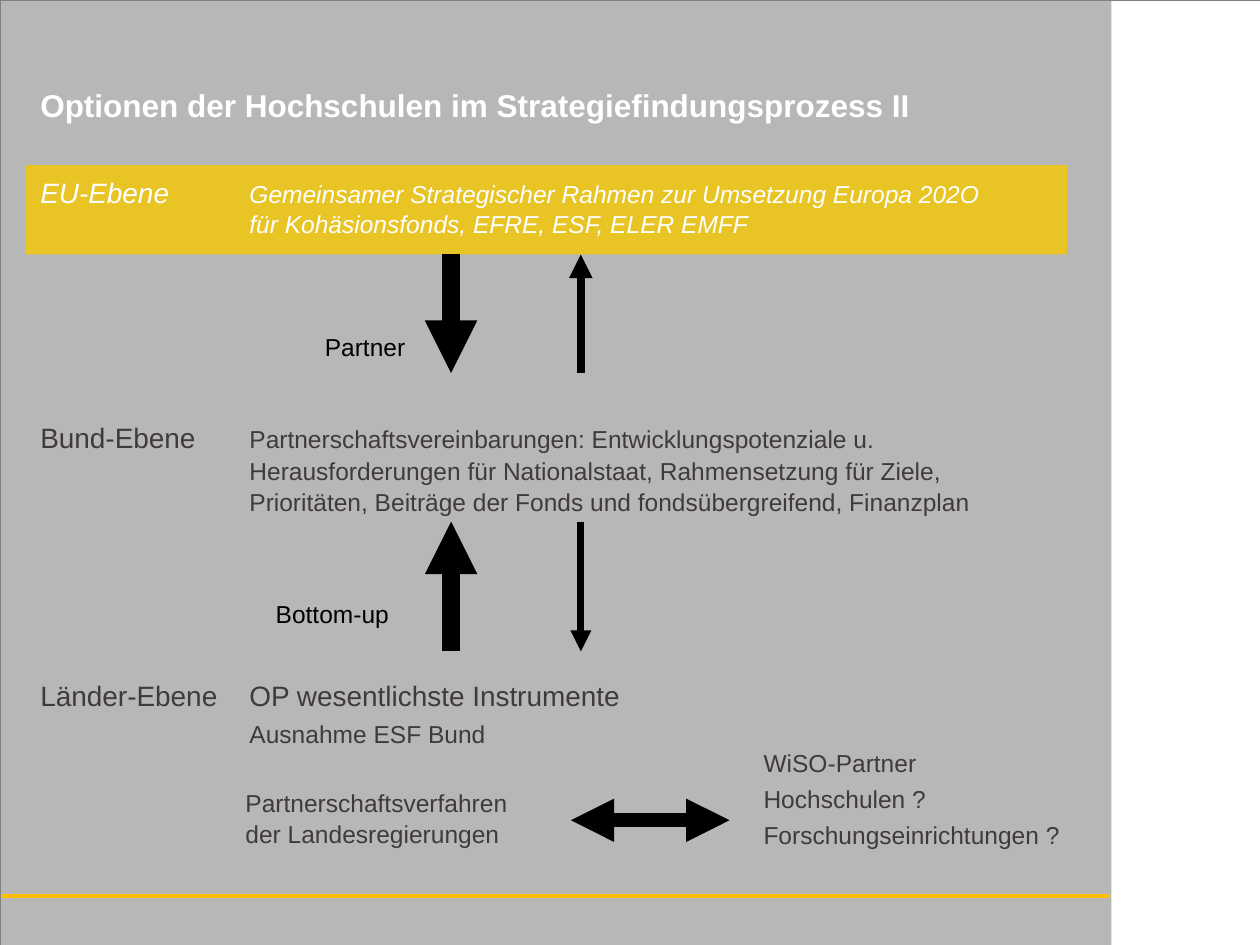
import pptx
import pptx.util
import pptx.dml.color
import pptx.enum.shapes
import pptx.enum.text
import pptx.oxml.ns
from lxml import etree

Inches = pptx.util.Inches
Pt = pptx.util.Pt
RGBColor = pptx.dml.color.RGBColor
Anchor = pptx.enum.text.MSO_ANCHOR
qn = pptx.oxml.ns.qn

GREY = RGBColor(0xB7, 0xB7, 0xB7)
FRAME_GREY = RGBColor(0x80, 0x80, 0x80)
WHITE = RGBColor(0xFF, 0xFF, 0xFF)
BLACK = RGBColor(0, 0, 0)
DARK = RGBColor(0x40, 0x3A, 0x3F)
YELLOW = RGBColor(0xE8, 0xC4, 0x25)
AMBER = RGBColor(0xFF, 0xC0, 0x00)

LEFT, WIDTH = 0.2, 8.27       # shared by title, band and level text
TEXT_COLUMN = Inches(1.66)    # tab stop after the level name
WIDE_INSETS = (0.12, 0.12, 0.12, 0.12)
LABEL_INSETS = (0.1, 0.05, 0.1, 0.05)


class StrategySlide:
    font = "Arial"
    line_spacing = 1.06
    paragraph_gap = Pt(2.8)

    def __init__(self, presentation):
        self.slide = presentation.slides.add_slide(presentation.slide_layouts[5])
        background = self.slide.background.fill
        background.solid()
        background.fore_color.rgb = GREY

    def style_runs(self, paragraph, color, size=None, bold=False, italic=False):
        for run in paragraph.runs:
            run.font.name = self.font
            run.font.color.rgb = color
            run.font.bold = bold
            run.font.italic = italic
            if size:
                run.font.size = Pt(size)

    def set_frame(self, frame, insets, anchor=Anchor.TOP):
        frame.word_wrap = True
        frame.auto_size = pptx.enum.text.MSO_AUTO_SIZE.NONE
        frame.vertical_anchor = anchor
        (frame.margin_left, frame.margin_top,
         frame.margin_right, frame.margin_bottom) = map(Inches, insets)

    def title(self, text, left, top, width, height):
        title = self.slide.shapes.title
        title.left, title.top = Inches(left), Inches(top)
        title.width, title.height = Inches(width), Inches(height)
        frame = title.text_frame
        self.set_frame(frame, (0.12, 0.12, 0.12, 0.28), Anchor.MIDDLE)
        frame.text = text
        frame.paragraphs[0].alignment = pptx.enum.text.PP_ALIGN.LEFT
        self.style_runs(frame.paragraphs[0], WHITE, 18, bold=True)

    def rectangle(self, left, top, width, height, fill=None, outline=None):
        box = self.slide.shapes.add_shape(
            pptx.enum.shapes.MSO_SHAPE.RECTANGLE,
            Inches(left), Inches(top), Inches(width), Inches(height))
        box.shadow.inherit = False
        if fill is None:
            box.fill.background()
        else:
            box.fill.solid()
            box.fill.fore_color.rgb = fill
        if outline is None:
            box.line.fill.background()
        else:
            box.line.color.rgb = outline
            box.line.width = Pt(0.25)
        return box

    def text_box(self, left, top, width, height):
        return self.slide.shapes.add_textbox(
            Inches(left), Inches(top), Inches(width), Inches(height))

    def level(self, box, rows, color=DARK, italic=False, spacing=line_spacing,
              anchor=Anchor.TOP):
        """Fill a box with tabbed rows, each a list of (text, size) runs."""
        frame = box.text_frame
        self.set_frame(frame, WIDE_INSETS, anchor)
        for number, row in enumerate(rows):
            paragraph = frame.add_paragraph() if number else frame.paragraphs[0]
            properties = paragraph._p.get_or_add_pPr()
            properties.set("marL", str(TEXT_COLUMN))
            properties.set("indent", str(-TEXT_COLUMN))
            tabs = etree.SubElement(properties, qn("a:tabLst"))
            etree.SubElement(tabs, qn("a:tab"), pos=str(TEXT_COLUMN), algn="l")
            paragraph.alignment = pptx.enum.text.PP_ALIGN.LEFT
            paragraph.line_spacing = spacing
            if number:
                paragraph.space_before = self.paragraph_gap
            for text, size in row:
                run = paragraph.add_run()
                run.text = text
                run.font.size = Pt(size)
            self.style_runs(paragraph, color, italic=italic)

    def label(self, lines, left, top, width, height, color=BLACK,
              insets=LABEL_INSETS):
        frame = self.text_box(left, top, width, height).text_frame
        self.set_frame(frame, insets)
        frame.text = "\n".join(lines)
        for number, paragraph in enumerate(frame.paragraphs):
            paragraph.line_spacing = self.line_spacing
            if number:
                paragraph.space_before = self.paragraph_gap
            self.style_runs(paragraph, color, 14)

    def line(self, start, end, width, color=BLACK, ends=()):
        """Draw a line; ends lists headEnd and/or tailEnd for arrowheads."""
        connector = self.slide.shapes.add_connector(
            pptx.enum.shapes.MSO_CONNECTOR.STRAIGHT,
            *map(Inches, start), *map(Inches, end))
        connector.line.color.rgb = color
        connector.line.width = Pt(width)
        for end_name in ends:
            etree.SubElement(connector.line._get_or_add_ln(),
                             qn("a:" + end_name), type="triangle")
        etree.SubElement(connector._element.spPr, qn("a:effectLst"))


def main():
    presentation = pptx.Presentation()
    presentation.slide_width = Inches(10)
    presentation.slide_height = Inches(7.5)
    page = StrategySlide(presentation)

    # Page frame: white margin, footer rule, thin outline
    page.rectangle(8.82, 0, 1.18, 7.5, fill=WHITE)
    page.line((-0.01, 7.11), (8.81, 7.11), 2, AMBER)
    page.rectangle(0, 0, 10, 7.5, outline=FRAME_GREY)

    page.title("Optionen der Hochschulen im Strategiefindungsprozess II",
               LEFT, 0.44, WIDTH, 0.94)

    # Three levels: EU, federation, states
    eu_band = page.rectangle(LEFT, 1.31, WIDTH, 0.71, fill=YELLOW)
    page.level(eu_band, [
        [("EU-Ebene", 16),
         ("\tGemeinsamer Strategischer Rahmen zur Umsetzung Europa 202O", 14)],
        [("\tfür Kohäsionsfonds, EFRE, ESF, ELER EMFF", 14)],
    ], WHITE, italic=True, spacing=0.85, anchor=Anchor.MIDDLE)
    page.level(page.text_box(LEFT, 3.2, WIDTH, 0.79), [
        [("Bund-Ebene\t", 16),
         ("Partnerschaftsvereinbarungen: Entwicklungspotenziale u. "
          "Herausforderungen für Nationalstaat, Rahmensetzung für Ziele, "
          "Prioritäten, Beiträge der Fonds und fondsübergreifend, "
          "Finanzplan", 14)],
    ])
    page.level(page.text_box(LEFT, 5.25, 4.88, 0.71), [
        [("Länder-Ebene\tOP wesentlichste Instrumente", 16)],
        [("\tAusnahme ESF Bund", 14)],
    ])

    # Partners on the state level
    page.label(["WiSO-Partner", "Hochschulen ?", "Forschungseinrichtungen ?"],
               5.94, 5.8, 2.6, 1.02, DARK, WIDE_INSETS)
    page.label(["Partnerschaftsverfahren der Landesregierungen"],
               1.85, 6.19, 2.5, 0.57, DARK)
    page.line((4.53, 6.51), (5.79, 6.51), 8.25, ends=("headEnd", "tailEnd"))

    # Arrows between the levels: strong on the left, slim on the right
    strong_x, slim_x = 3.58, 4.61
    for x, start, end, width in (
            (strong_x, 2.02, 2.96, 10), (slim_x, 2.96, 2.02, 4.5),
            (strong_x, 5.17, 4.14, 10), (slim_x, 4.14, 5.17, 4)):
        page.line((x, start), (x, end), width, ends=("tailEnd",))
    page.label(["Partner"], 2.48, 2.57, 0.86, 0.33)
    page.label(["Bottom-up"], 2.09, 4.69, 1.26, 0.33)

    presentation.save("out.pptx")


if __name__ == "__main__":
    main()
